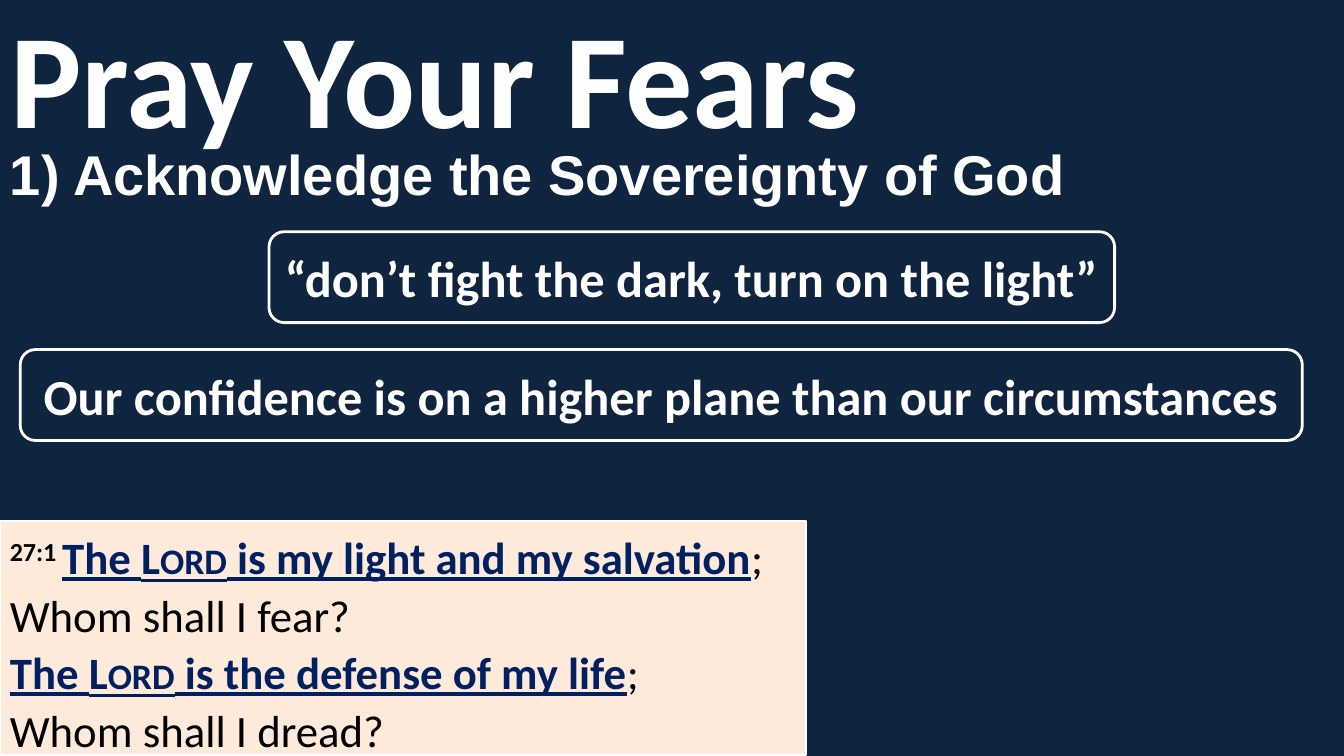
from dataclasses import dataclass

from pptx import Presentation
from pptx.dml.color import RGBColor
from pptx.enum.shapes import MSO_SHAPE
from pptx.enum.text import MSO_ANCHOR, MSO_AUTO_SIZE, PP_ALIGN
from pptx.shapes.autoshape import Shape
from pptx.slide import Slide
from pptx.text.text import Font
from pptx.util import Cm, Pt


@dataclass(frozen=True)
class Theme:
    navy: RGBColor = RGBColor(0x0F, 0x24, 0x3E)
    white: RGBColor = RGBColor(0xFF, 0xFF, 0xFF)
    black: RGBColor = RGBColor(0x00, 0x00, 0x00)
    cream: RGBColor = RGBColor(0xFD, 0xEA, 0xDA)
    emphasis: RGBColor = RGBColor(0x00, 0x20, 0x60)
    body_font: str = "Calibri"
    point_font: str = "Arial"
    title_size: int = 96
    point_size: int = 40
    callout_size: int = 36
    verse_size: int = 32


@dataclass(frozen=True)
class Box:
    left: float
    top: float
    width: float
    height: float


@dataclass(frozen=True)
class Callout:
    text: str
    box: Box


@dataclass(frozen=True)
class VersePart:
    text: str
    emphasized: bool = False
    small_caps: bool = False
    superscript: bool = False
    ends_line: bool = False


THEME = Theme()

CALLOUTS = [
    Callout("“don’t fight the dark, turn on the light”", Box(6.78, 5.84, 21.31, 2.29)),
    Callout("Our confidence is on a higher plane than our circumstances",
            Box(0.51, 8.81, 32.31, 2.29)),
]

VERSE = [
    VersePart("27:1 ", superscript=True),
    VersePart("The ", emphasized=True),
    VersePart("Lord", emphasized=True, small_caps=True),
    VersePart(" is my light and my salvation", emphasized=True),
    VersePart(";", ends_line=True),
    VersePart("Whom shall I fear?", ends_line=True),
    VersePart("The ", emphasized=True),
    VersePart("Lord", emphasized=True, small_caps=True),
    VersePart(" is the defense of my life", emphasized=True),
    VersePart(";", ends_line=True),
    VersePart("Whom shall I dread?"),
]


def bounds(box: Box) -> tuple[Cm, Cm, Cm, Cm]:
    return Cm(box.left), Cm(box.top), Cm(box.width), Cm(box.height)


def style_font(font: Font, name: str, size: int, color: RGBColor, bold: bool) -> None:
    font.name = name
    font.size = Pt(size)
    font.color.rgb = color
    font.bold = bold


def add_panel(slide: Slide, kind: MSO_SHAPE, box: Box, fill: RGBColor,
              line_width: float) -> Shape:
    shape = slide.shapes.add_shape(kind, *bounds(box))
    shape.shadow.inherit = False
    shape.fill.solid()
    shape.fill.fore_color.rgb = fill
    shape.line.color.rgb = THEME.white
    shape.line.width = Pt(line_width)
    shape.text_frame.word_wrap = True
    return shape


def set_title(slide: Slide, text: str, box: Box) -> None:
    title = slide.shapes.title
    title.left, title.top, title.width, title.height = bounds(box)
    frame = title.text_frame
    frame.text = text
    frame.auto_size = MSO_AUTO_SIZE.NONE
    frame.vertical_anchor = MSO_ANCHOR.MIDDLE
    paragraph = frame.paragraphs[0]
    paragraph.alignment = PP_ALIGN.LEFT
    style_font(paragraph.font, THEME.body_font, THEME.title_size, THEME.white, True)


def add_point(slide: Slide, text: str, box: Box) -> None:
    frame = slide.shapes.add_textbox(*bounds(box)).text_frame
    frame.word_wrap = True
    frame.auto_size = MSO_AUTO_SIZE.SHAPE_TO_FIT_TEXT
    frame.text = text
    style_font(frame.paragraphs[0].font, THEME.point_font, THEME.point_size,
               THEME.white, True)


def add_callout(slide: Slide, callout: Callout) -> None:
    shape = add_panel(slide, MSO_SHAPE.ROUNDED_RECTANGLE, callout.box, THEME.navy, 2)
    frame = shape.text_frame
    frame.vertical_anchor = MSO_ANCHOR.MIDDLE
    frame.text = callout.text
    paragraph = frame.paragraphs[0]
    paragraph.alignment = PP_ALIGN.CENTER
    style_font(paragraph.font, THEME.body_font, THEME.callout_size, THEME.white, True)


def add_verse(slide: Slide, parts: list[VersePart], box: Box) -> None:
    shape = add_panel(slide, MSO_SHAPE.RECTANGLE, box, THEME.cream, 1.5)
    frame = shape.text_frame
    frame.vertical_anchor = MSO_ANCHOR.TOP
    paragraph = frame.paragraphs[0]
    paragraph.alignment = PP_ALIGN.LEFT
    paragraph.line_spacing = 1.07
    for part in parts:
        run = paragraph.add_run()
        run.text = part.text
        color = THEME.emphasis if part.emphasized else THEME.black
        style_font(run.font, THEME.body_font, THEME.verse_size, color,
                   part.emphasized or part.superscript)
        run.font.underline = part.emphasized
        properties = run._r.get_or_add_rPr()
        if part.small_caps:
            properties.set("cap", "small")
        if part.superscript:
            properties.set("baseline", "30000")
        if part.ends_line:
            paragraph.add_line_break()


def main() -> None:
    presentation = Presentation()
    presentation.slide_width = Cm(33.87)
    presentation.slide_height = Cm(19.05)
    slide = presentation.slides.add_slide(presentation.slide_layouts[5])

    # Background
    slide.background.fill.solid()
    slide.background.fill.fore_color.rgb = THEME.navy

    # Scripture panel
    add_verse(slide, VERSE, Box(0, 13.13, 20.32, 5.89))

    # Headings
    set_title(slide, "Pray Your Fears", Box(0, -0.03, 33.87, 3.84))
    add_point(slide, "1) Acknowledge the Sovereignty of God", Box(0, 3.38, 27.31, 1.96))

    # Outlined statements
    for callout in CALLOUTS:
        add_callout(slide, callout)

    presentation.save("out.pptx")


if __name__ == "__main__":
    main()
